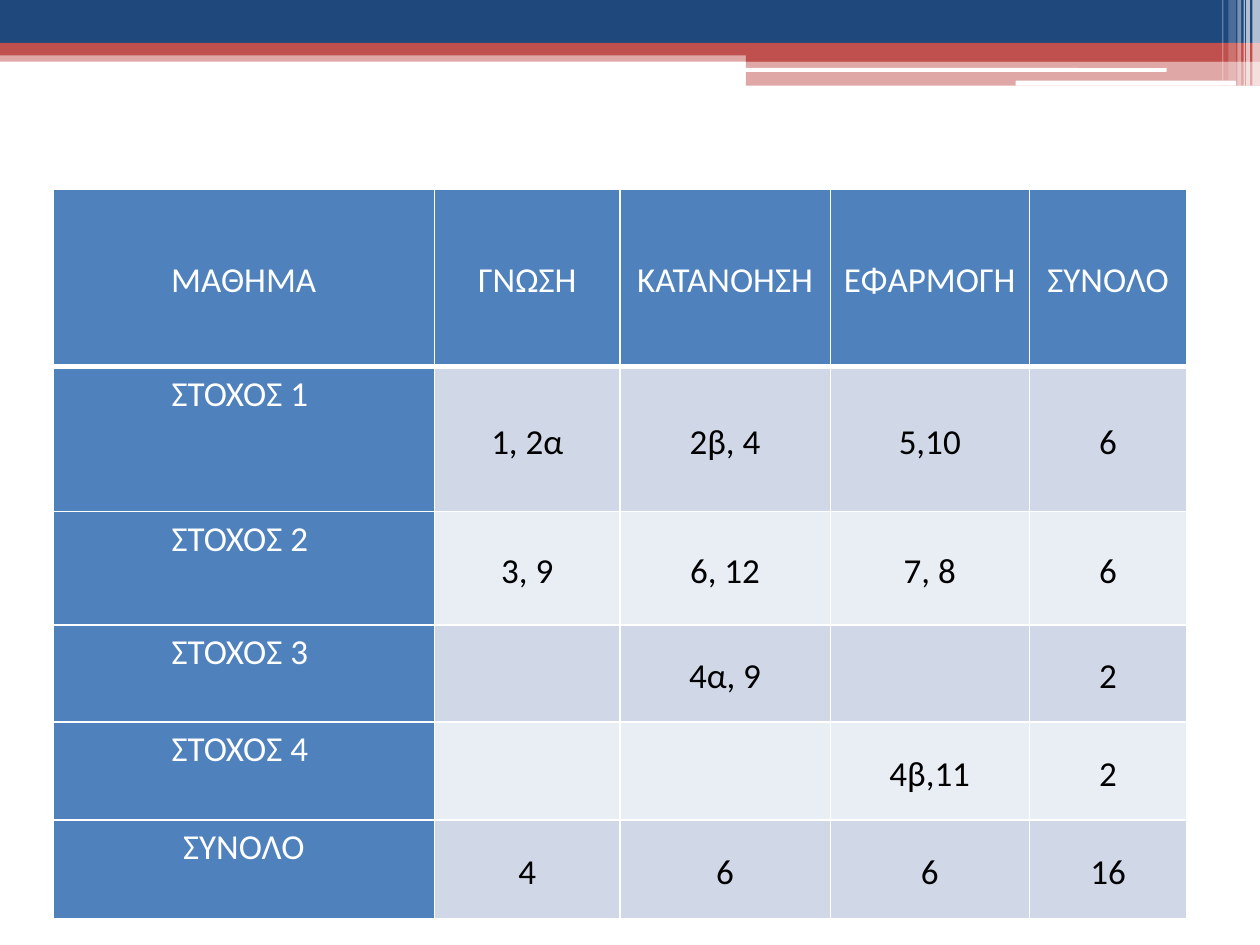
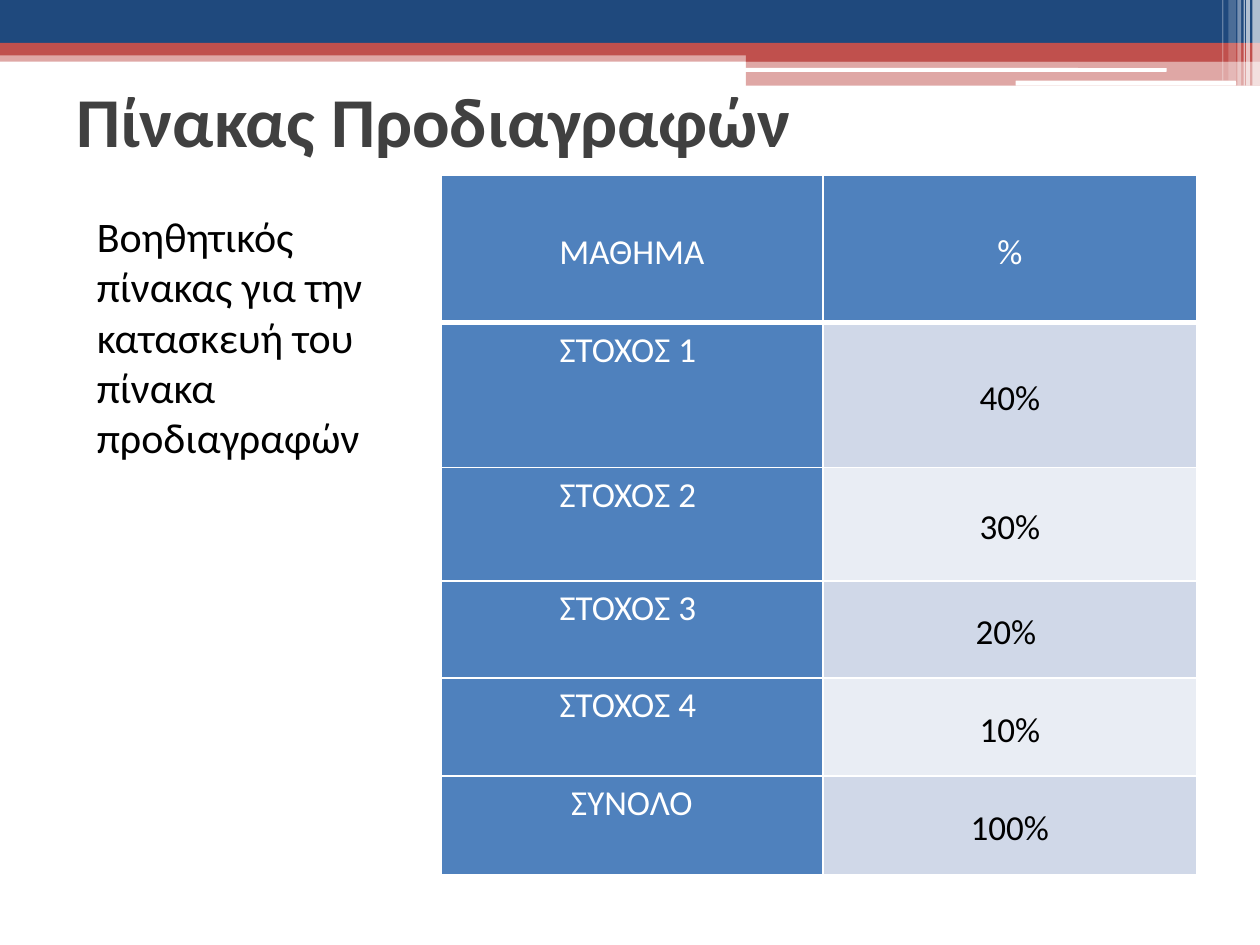
import pptx
import pptx.dml.color
import pptx.enum.shapes
import pptx.enum.text
import pptx.oxml.xmlchemy
import pptx.oxml.ns
import pptx.util
from lxml import etree

Inches = pptx.util.Inches
Pt = pptx.util.Pt
qn = pptx.oxml.ns.qn
SHAPE = pptx.enum.shapes.MSO_SHAPE
ALIGN = pptx.enum.text.PP_ALIGN
ANCHOR = pptx.enum.text.MSO_ANCHOR

COLORS = {
    "navy": "1F497D",
    "red": "C0504D",
    "white": "FFFFFF",
    "black": "000000",
    "title": "404040",
    "head": "4F81BD",
    "odd": "D0D8E8",
    "even": "E9EDF4",
}
FONT = "Calibri"

BANDS = [
    (0, 0.4, 10, 0.09, "red", 50),
    (0, 0, 10, 0.34, "navy", 100),
    (0, 0.34, 10, 0.1, "red", 100),
    (5.92, 0.39, 4.08, 0.1, "red", 100),
    (5.92, 0.48, 4.08, 0.2, "red", 50),
]
WHITE_BARS = [(5.91, 0.54, 3.35, 0.03), (8.06, 0.64, 1.75, 0.04)]
STRIPES = [
    (9.94, 0.06, 0.68, 65),
    (9.89, 0.03, 0.68, 65),
    (9.87, 0.01, 0.68, 60),
    (9.82, 0.03, 0.68, 40),
    (9.75, 0.06, 0.64, 20),
    (9.7, 0.01, 0.64, 30),
]

GOAL_ROWS = [1.15, 0.9, 0.77, 0.78, 0.78]
GOALS = [f"ΣΤΟΧΟΣ {n} " for n in range(1, 5)] + ["ΣΥΝΟΛΟ"]
QUESTIONS_HEAD = ["ΜΑΘΗΜΑ", "ΓΝΩΣΗ", "ΚΑΤΑΝΟΗΣΗ", "ΕΦΑΡΜΟΓΗ", "ΣΥΝΟΛΟ"]
QUESTIONS = [
    ["1, 2α", "2β, 4", "5,10", "6"],
    ["3, 9", "6, 12", "7, 8", "6"],
    ["", "4α, 9", "", "2"],
    ["", "", "4β,11", "2"],
    ["4", "6", "6", "16"],
]
WEIGHTS = [["40%"], ["30%"], ["20% "], ["10%"], ["100%"]]


def rgb(name):
    return pptx.dml.color.RGBColor.from_string(COLORS[name])


class Deck:
    def __init__(self):
        self.prs = pptx.Presentation()
        self.prs.slide_width = Inches(10)
        self.prs.slide_height = Inches(7.5)
        self.s = None

    def slide(self, layout):
        self.s = self.prs.slides.add_slide(self.prs.slide_layouts.get_by_name(layout))

    def style(self, p, size, color, bold=False):
        for r in p.runs:
            r.font.name = FONT
            r.font.size = Pt(size)
            r.font.bold = bold
            r.font.color.rgb = rgb(color)

    def band(self, x, y, w, h, color, opacity=100, kind=SHAPE.RECTANGLE):
        sp = self.s.shapes.add_shape(kind, Inches(x), Inches(y), Inches(w), Inches(h))
        sp.shadow.inherit = False
        sp.line.fill.background()
        sp.fill.solid()
        sp.fill.fore_color.rgb = rgb(color)
        if opacity < 100:
            clr = sp._element.spPr.find(qn("a:solidFill"))[0]
            etree.SubElement(clr, qn("a:alpha"), val=str(opacity * 1000))
        return sp

    def master_bands(self):
        shapes = [self.band(*band) for band in BANDS]
        shapes += [self.band(*bar, "white", kind=SHAPE.ROUNDED_RECTANGLE) for bar in WHITE_BARS]
        shapes += [self.band(x, 0, w, h, "white", opacity) for x, w, h, opacity in STRIPES]
        tree = self.prs.slide_master.shapes._spTree
        for number, sp in enumerate(shapes, 101):
            sp._element.nvSpPr.cNvPr.set("id", str(number))
            tree.append(sp._element)

    def title(self, text, x, y, w, h):
        sp = self.s.shapes.title
        sp.left, sp.top, sp.width, sp.height = map(Inches, (x, y, w, h))
        tf = sp.text_frame
        tf.text = text
        tf.vertical_anchor = ANCHOR.MIDDLE
        tf.paragraphs[0].alignment = ALIGN.LEFT
        self.style(tf.paragraphs[0], 40, "title", bold=True)

    def note(self, text, x, y, w, h):
        sp = self.s.shapes.add_textbox(Inches(x), Inches(y), Inches(w), Inches(h))
        tf = sp.text_frame
        tf.word_wrap = True
        tf.text = text
        self.style(tf.paragraphs[0], 24, "black")

    def borders(self, cell, bottom):
        tcPr = cell._tc.get_or_add_tcPr()
        for side, width in (("L", 1), ("R", 1), ("T", 1), ("B", bottom)):
            ln = etree.SubElement(tcPr, qn(f"a:ln{side}"), w=str(Pt(width)))
            fill = etree.SubElement(ln, qn("a:solidFill"))
            etree.SubElement(fill, qn("a:srgbClr"), val=COLORS["white"])

    def cell(self, cell, text, row, col):
        heading = row == 0 or col == 0
        self.borders(cell, 1 if row else 3)
        cell.fill.solid()
        cell.fill.fore_color.rgb = rgb("head" if heading else "odd" if row % 2 else "even")
        cell.margin_left = cell.margin_right = Inches(0.07)
        cell.margin_top = cell.margin_bottom = 0
        cell.vertical_anchor = ANCHOR.TOP if row and not col else ANCHOR.MIDDLE
        if not text:
            return
        cell.text_frame.text = text
        p = cell.text_frame.paragraphs[0]
        p.alignment = ALIGN.CENTER
        p.line_spacing = 1.15
        p.space_after = Pt(10)
        if text in GOALS[:-1]:
            pPr = p._p.get_or_add_pPr()
            pPr.set("marL", str(Inches(0.38)))
            pPr.set("indent", str(-Inches(0.38)))
        self.style(p, 20, "white" if heading else "black")

    def table(self, x, y, cols, head_height, head, values):
        heights = [head_height] + GOAL_ROWS
        rows = [head] + [[goal] + line for goal, line in zip(GOALS, values)]
        frame = self.s.shapes.add_table(
            len(rows), len(cols), Inches(x), Inches(y), Inches(sum(cols)), Inches(sum(heights))
        )
        table = frame.table
        table.first_row = table.horz_banding = False
        for col, width in zip(table.columns, cols):
            col.width = Inches(width)
        for row, height in zip(table.rows, heights):
            row.height = Inches(height)
        for i, line in enumerate(rows):
            for j, text in enumerate(line):
                self.cell(table.cell(i, j), text, i, j)


def main():
    deck = Deck()

    deck.slide("Blank")
    deck.master_bands()
    deck.table(0.42, 1.5, [3.03, 1.47, 1.67, 1.58, 1.25], 1.41, QUESTIONS_HEAD, QUESTIONS)

    deck.slide("Title Only")
    deck.title("Πίνακας Προδιαγραφών", 0.51, 0.36, 9, 1.17)
    deck.table(3.5, 1.39, [3.03, 2.97], 1.17, ["ΜΑΘΗΜΑ", "%"], WEIGHTS)
    deck.note("Βοηθητικός πίνακας για την κατασκευή του πίνακα προδιαγραφών", 0.67, 1.62, 2.44, 2.12)

    deck.prs.save("out.pptx")


if __name__ == "__main__":
    main()
